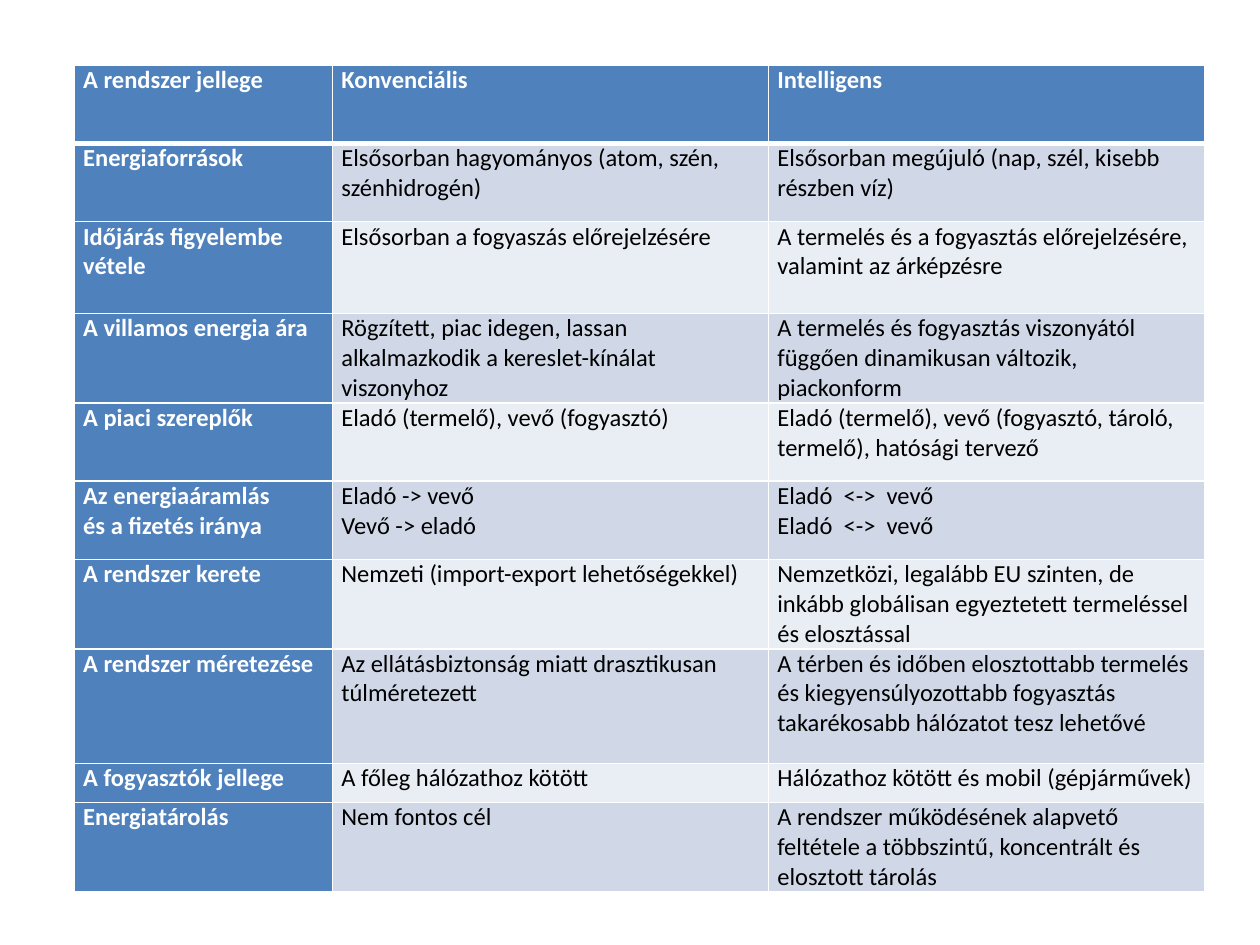
import pptx
import pptx.dml.color
import pptx.oxml
import pptx.oxml.ns
import pptx.util
from pptx.util import Inches

WHITE, BLACK, BLUE = "FFFFFF", "000000", "4F81BD"
BANDS = ["D0D8E8", "E9EDF4"]
COLUMN_WIDTHS = [2.05, 3.46, 3.46]

# Row height in inches, then the three cells; a line break starts a paragraph.
ROWS = [
    (0.62, "A rendszer jellege", "Konvenciális", "Intelligens"),
    (0.62, "Energiaforrások",
     "Elsősorban hagyományos (atom, szén, szénhidrogén)",
     "Elsősorban megújuló (nap, szél, kisebb részben víz)"),
    (0.73, "Időjárás figyelembe vétele",
     "Elsősorban a fogyaszás előrejelzésére",
     "A termelés és a fogyasztás előrejelzésére, valamint az árképzésre"),
    (0.62, "A villamos energia ára",
     "Rögzített, piac idegen, lassan alkalmazkodik a kereslet-kínálat viszonyhoz",
     "A termelés és fogyasztás viszonyától függően dinamikusan változik, piackonform"),
    (0.62, "A piaci szereplők",
     "Eladó (termelő), vevő (fogyasztó)",
     "Eladó (termelő), vevő (fogyasztó, tároló, termelő), hatósági tervező"),
    (0.62, "Az energiaáramlás\nés a fizetés iránya",
     "Eladó -> vevő\nVevő -> eladó",
     "Eladó  <->  vevő\nEladó  <->  vevő"),
    (0.62, "A rendszer kerete",
     "Nemzeti (import-export lehetőségekkel)",
     "Nemzetközi, legalább EU szinten, de inkább globálisan egyeztetett "
     "termeléssel és elosztással"),
    (0.91, "A rendszer méretezése",
     "Az ellátásbiztonság miatt drasztikusan túlméretezett",
     "A térben és időben elosztottabb termelés és kiegyensúlyozottabb fogyasztás "
     "takarékosabb hálózatot tesz lehetővé"),
    (0.31, "A fogyasztók jellege",
     "A főleg hálózathoz kötött",
     "Hálózathoz kötött és mobil (gépjárművek)"),
    (0.62, "Energiatárolás",
     "Nem fontos cél",
     "A rendszer működésének alapvető feltétele a többszintű, koncentrált "
     "és elosztott tárolás"),
]


def rgb(color):
    return pptx.dml.color.RGBColor.from_string(color)


class SlideBuilder:
    font, size = "Calibri", 14

    def __init__(self, slide):
        self.slide = slide

    def table(self, left, top, widths, rows):
        height = sum(row[0] for row in rows)
        frame = self.slide.shapes.add_table(
            len(rows), len(widths), Inches(left), Inches(top),
            Inches(sum(widths)), Inches(height))
        table = frame.table
        for column, width in zip(table.columns, widths):
            column.width = Inches(width)
        for i, (row_height, *texts) in enumerate(rows):
            table.rows[i].height = Inches(row_height)
            for j, text in enumerate(texts):
                heading = i == 0 or j == 0
                cell = table.cell(i, j)
                self.cell(cell, text, heading,
                          BLUE if heading else BANDS[(i - 1) % 2])
                self.borders(cell, L=1, R=1, T=3 if i == 1 else 1,
                             B=3 if i == 0 else 1)

    def cell(self, cell, text, heading, fill):
        cell.fill.solid()
        cell.fill.fore_color.rgb = rgb(fill)
        cell.margin_left = cell.margin_right = Inches(0.07)
        cell.margin_top = cell.margin_bottom = 0
        tf = cell.text_frame
        for k, line in enumerate(text.split("\n")):
            p = tf.add_paragraph() if k else tf.paragraphs[0]
            r = p.add_run()
            r.text = line
            r.font.name = self.font
            r.font.size = pptx.util.Pt(self.size)
            r.font.bold = heading
            r.font.color.rgb = rgb(WHITE if heading else BLACK)

    def borders(self, cell, **widths):
        """Draw white cell sides; the lines must precede the fill in tcPr."""
        tc_pr = cell._tc.get_or_add_tcPr()
        for index, (side, width) in enumerate(widths.items()):
            tc_pr.insert(index, pptx.oxml.parse_xml(
                f'<a:ln{side} {pptx.oxml.ns.nsdecls("a")} w="{pptx.util.Pt(width)}">'
                f'<a:solidFill><a:srgbClr val="{WHITE}"/></a:solidFill></a:ln{side}>'))


def main():
    prs = pptx.Presentation()
    prs.slide_width, prs.slide_height = Inches(10), Inches(7.5)
    s = SlideBuilder(prs.slides.add_slide(prs.slide_layouts[6]))
    s.table(0.59, 0.52, COLUMN_WIDTHS, ROWS)
    prs.save("out.pptx")


if __name__ == "__main__":
    main()
